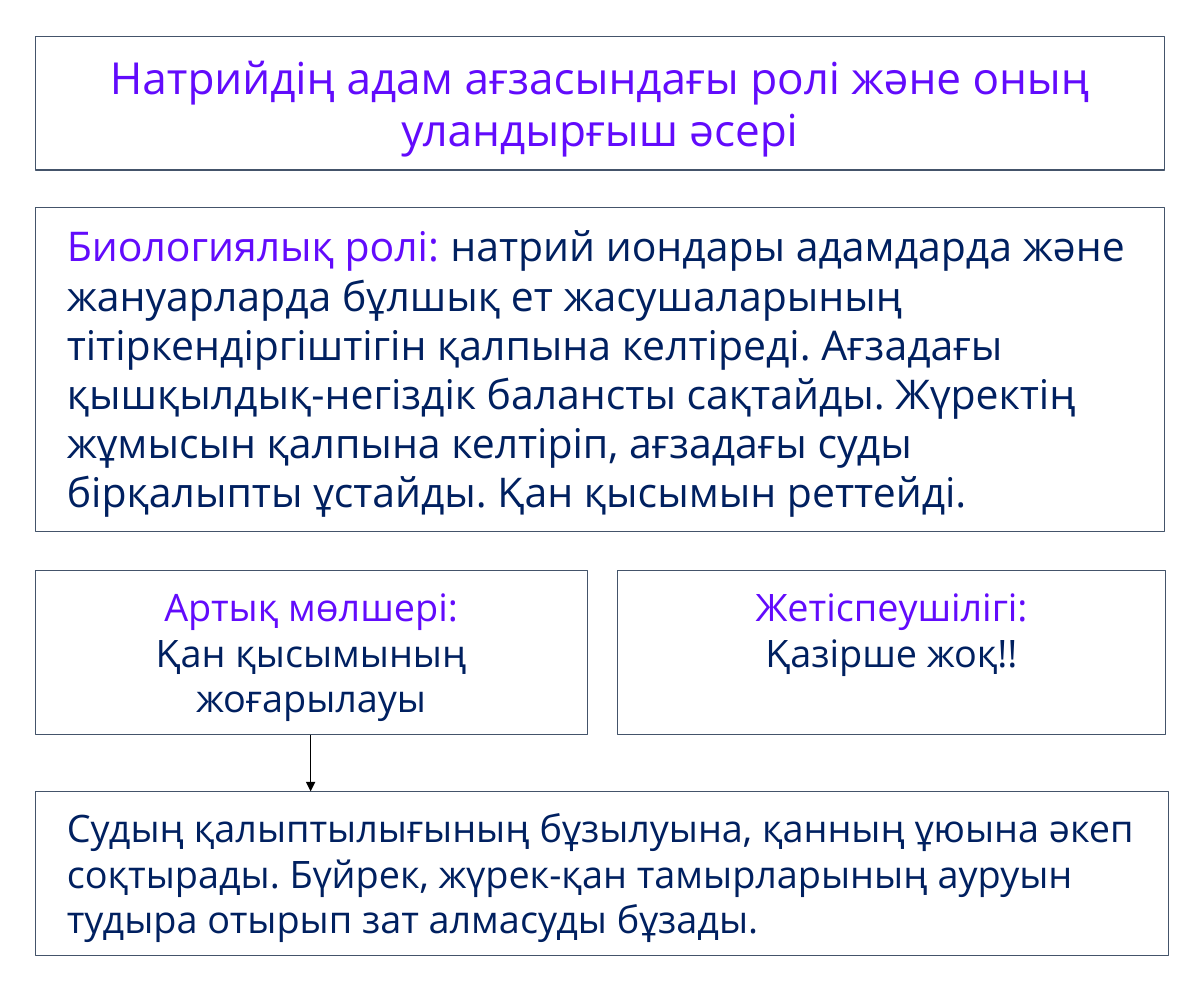
import pptx
import pptx.dml.color
import pptx.enum.shapes
import pptx.enum.text
import pptx.oxml.ns
import pptx.util
import lxml.etree
import dataclasses


@dataclasses.dataclass(frozen=True)
class Theme:
    font: str = "Open Sans"
    heading: str = "620BFC"
    body: str = "002060"
    border: str = "44546A"
    arrow: str = "000000"
    title_size: int = 28
    role_size: int = 26
    effect_size: int = 24


theme = Theme()
PX = 9144  # 100 px to the inch
CENTER = pptx.enum.text.PP_ALIGN.CENTER
LEFT = pptx.enum.text.PP_ALIGN.LEFT


def rgb(color):
    return pptx.dml.color.RGBColor.from_string(color)


def add_span(para, text, *, size, color):
    span = para.add_run()
    span.text = text
    span.font.name = theme.font
    span.font.size = pptx.util.Pt(size)
    span.font.color.rgb = rgb(color)


# Deck and page
deck = pptx.Presentation()
deck.slide_width = 1062 * PX
deck.slide_height = 875 * PX
page = deck.slides.add_slide(deck.slide_layouts[6])

# Boxes: position, type size, alignment, paragraphs of (text, color) spans
boxes = [
    ((31, 32, 996, 118), theme.title_size, CENTER, [
        [("Натрийдің адам ағзасындағы ролі және оның уландырғыш әсері", theme.heading)],
    ]),
    ((31, 183, 996, 286), theme.role_size, LEFT, [
        [("Биологиялық ролі: ", theme.heading),
         ("натрий иондары адамдарда және жануарларда бұлшық ет жасушаларының "
          "тітіркендіргіштігін қалпына келтіреді. Ағзадағы қышқылдық-негіздік "
          "балансты сақтайды. Жүректің жұмысын қалпына келтіріп, ағзадағы суды "
          "бірқалыпты ұстайды. Қан қысымын реттейді.", theme.body)],
    ]),
    ((31, 503, 487, 145), theme.effect_size, CENTER, [
        [("Артық мөлшері:", theme.heading)],
        [("Қан қысымының жоғарылауы", theme.body)],
    ]),
    ((545, 503, 483, 145), theme.effect_size, CENTER, [
        [("Жетіспеушілігі:", theme.heading)],
        [("Қазірше жоқ!!", theme.body)],
    ]),
    ((31, 698, 1000, 145), theme.effect_size, LEFT, [
        [("Судың қалыптылығының бұзылуына, қанның ұюына әкеп соқтырады. "
          "Бүйрек, жүрек-қан тамырларының ауруын тудыра отырып зат алмасуды "
          "бұзады.", theme.body)],
    ]),
]

for place, size, alignment, paragraphs in boxes:
    box = page.shapes.add_shape(
        pptx.enum.shapes.MSO_SHAPE.RECTANGLE, *(length * PX for length in place))
    box.shadow.inherit = False
    box.fill.background()
    box.line.color.rgb = rgb(theme.border)
    box.line.width = pptx.util.Pt(0.75)
    frame = box.text_frame
    frame.word_wrap = True
    frame.vertical_anchor = pptx.enum.text.MSO_ANCHOR.TOP
    frame.margin_left = frame.margin_right = 28 * PX
    frame.margin_top = frame.margin_bottom = 12 * PX
    for index, spans in enumerate(paragraphs):
        para = frame.add_paragraph() if index else frame.paragraphs[0]
        para.alignment = alignment
        for text, color in spans:
            add_span(para, text, size=size, color=color)

# Arrow from the excess box to its consequences
arrow = page.shapes.add_connector(
    pptx.enum.shapes.MSO_CONNECTOR.STRAIGHT, 274 * PX, 648 * PX, 274 * PX, 698 * PX)
arrow.line.color.rgb = rgb(theme.arrow)
arrow.line.width = pptx.util.Pt(0.5)
line_xml = arrow.line._get_or_add_ln()
lxml.etree.SubElement(line_xml, pptx.oxml.ns.qn("a:tailEnd"), type="triangle")
lxml.etree.SubElement(line_xml.getparent(), pptx.oxml.ns.qn("a:effectLst"))

deck.save("out.pptx")
